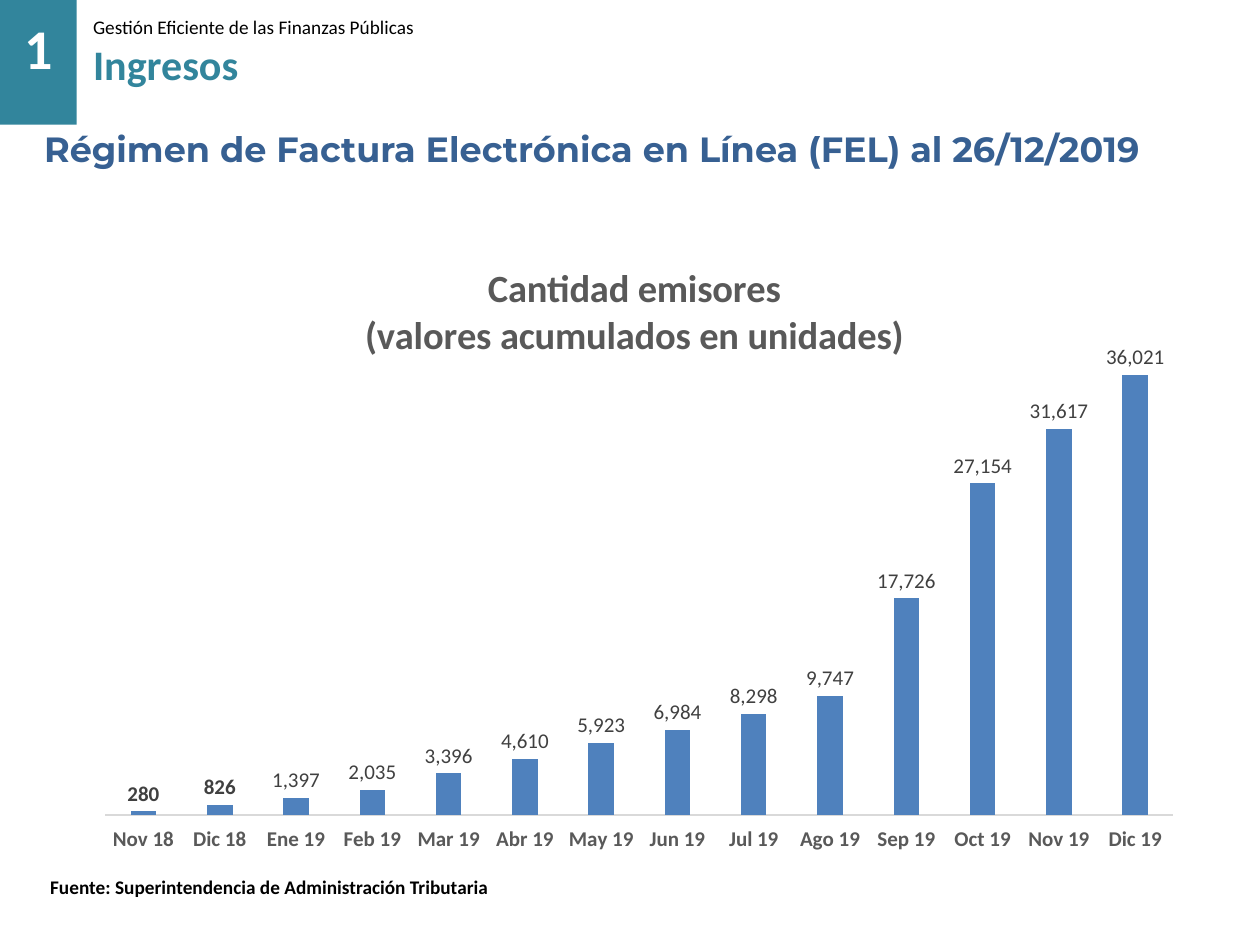
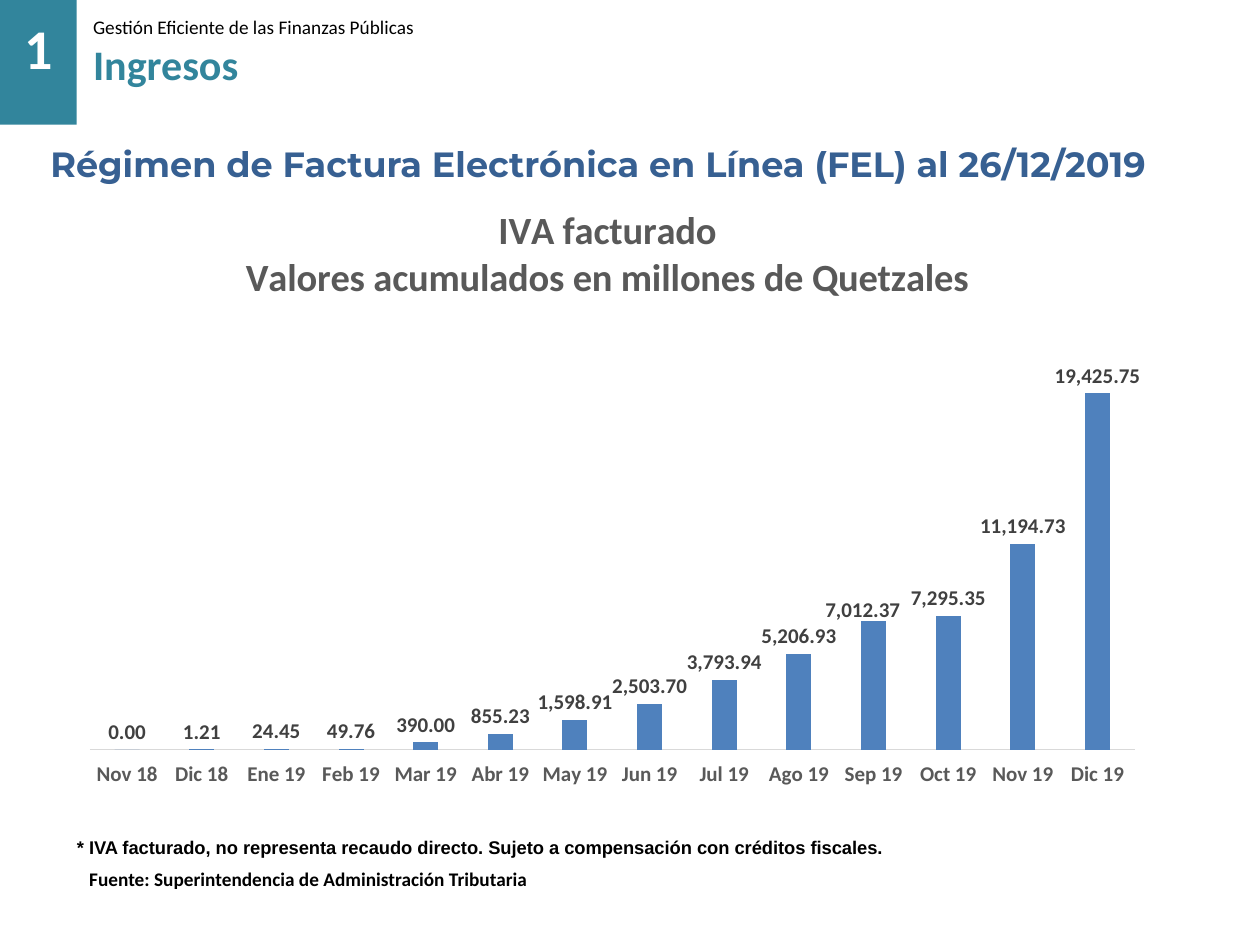
from lxml.etree import SubElement as Sub
from pptx import Presentation
from pptx.chart.data import CategoryChartData as ChartData
from pptx.dml.color import RGBColor as RGB
from pptx.enum.chart import XL_CHART_TYPE as Kind, XL_LABEL_POSITION as Pos
from pptx.enum.chart import XL_TICK_LABEL_POSITION as TickPos, XL_TICK_MARK as Tick
from pptx.enum.shapes import MSO_SHAPE as Shape
from pptx.enum.text import MSO_ANCHOR as Anchor, MSO_AUTO_SIZE as Auto
from pptx.oxml.ns import qn
from pptx.util import Inches, Pt

TEAL = RGB(0x32, 0x85, 0x9C)
NAVY = RGB(0x37, 0x60, 0x92)
BLUE = RGB(0x4F, 0x81, 0xBD)
DARK = RGB(0x40, 0x40, 0x40)
GRAY = RGB(0x59, 0x59, 0x59)
PALE = RGB(0xD9, 0xD9, 0xD9)
BLACK = RGB(0, 0, 0)
WHITE = RGB(255, 255, 255)

WIDTH, HEIGHT = Inches(10), Inches(7.5)
COLS, ROWS = 100, 75

HEAD = dict(name="Montserrat", size=Pt(20), bold=True, color=NAVY)
SMALL = dict(name="Calibri", size=Pt(11), bold=False, color=BLACK)
TOPIC = dict(name="Calibri", size=Pt(24), bold=True, color=TEAL)
DIGIT = dict(name="Calibri", size=Pt(32), bold=True, color=WHITE)
NOTE = dict(name="Arial", size=Pt(10.5), bold=True, color=BLACK)
TITLE = dict(name="Calibri", size=Pt(22), bold=True, color=GRAY)
LABEL = dict(name="Calibri", size=Pt(12), bold=True, color=DARK)
MONTH = LABEL | dict(color=GRAY)
SOURCE = SMALL | dict(bold=True)

HEADING = "Régimen de Factura Electrónica en Línea (FEL) al 26/12/2019"
ORIGIN = "Fuente: Superintendencia de Administración Tributaria"
MONTHS = ["Nov 18", "Dic 18"] + [
    f"{name} 19" for name in
    "Ene Feb Mar Abr May Jun Jul Ago Sep Oct Nov Dic".split()]
ISSUERS = [280, 826, 1397, 2035, 3396, 4610, 5923, 6984, 8298, 9747,
           17726, 27154, 31617, 36021]
TAXES = [0, 1.21, 24.45, 49.76, 390, 855.23, 1598.91, 2503.7, 3793.94,
         5206.93, 7012.37, 7295.35, 11194.73, 19425.75]


def paint(font, look):
    for key, value in look.items():
        if key == "color":
            font.color.rgb = value
        else:
            setattr(font, key, value)


def place(part, index, modes, **shares):
    """Give a chart part a manual layout, as shares of the chart's size."""
    for old in part.findall(qn("c:layout")):
        part.remove(old)
    layout = part.makeelement(qn("c:layout"))
    part.insert(index, layout)
    manual = Sub(layout, qn("c:manualLayout"))
    for key, value in (modes | shares).items():
        Sub(manual, qn(f"c:{key}")).set("val", str(value))


EDGE = dict(xMode="edge", yMode="edge")
INNER = dict(layoutTarget="inner") | EDGE


class Deck:
    def __init__(self):
        self.show = Presentation()
        self.show.slide_width, self.show.slide_height = WIDTH, HEIGHT
        self.slide = None

    def grid(self, col, row, cols, rows):
        across, down = WIDTH / COLS, HEIGHT / ROWS
        return [round(n) for n in
                (col * across, row * down, cols * across, rows * down)]

    def text(self, cell, *lines):
        """Add a growing text box; each line is a (text, look) pair."""
        frame = self.slide.shapes.add_textbox(*self.grid(*cell)).text_frame
        frame.word_wrap = True
        frame.auto_size = Auto.SHAPE_TO_FIT_TEXT
        self.fill(frame, lines)
        return frame

    def fill(self, frame, lines):
        for i, (words, look) in enumerate(lines):
            para = frame.add_paragraph() if i else frame.paragraphs[0]
            run = para.add_run()
            run.text = words
            paint(run.font, look)

    def strip(self, cell, words, look):
        """Add a one-line band of text, centred on its height."""
        frame = self.text(cell, (words, look))
        frame.auto_size = Auto.NONE
        frame.vertical_anchor = Anchor.MIDDLE
        frame.margin_left = frame.margin_right = Inches(0.07)
        frame.margin_top = frame.margin_bottom = Inches(0.04)
        frame.paragraphs[0].line_spacing = Pt(13.3)

    def block(self, cell, color):
        shape = self.slide.shapes.add_shape(Shape.RECTANGLE, *self.grid(*cell))
        shape.shadow.inherit = False
        shape.fill.solid()
        shape.fill.fore_color.rgb = color
        shape.line.fill.background()

    def page(self):
        self.slide = self.show.slides.add_slide(self.show.slide_layouts[6])

    def badge(self):
        self.text((6.4, 0.7, 86.2, 6.9),
                  ("Gestión Eficiente de las Finanzas Públicas", SMALL),
                  ("Ingresos", TOPIC))
        self.block((-0.2, -0.3, 6.3, 10.2), TEAL)
        self.text((1, 0.6, 5.6, 6.4), ("1", DIGIT))

    def bars(self, cell, values, form, top, title, spot, area):
        """Add a column chart; spot and area lay out its title and plot."""
        data = ChartData(number_format=form)
        data.categories = MONTHS
        data.add_series("Series 1", values)
        chart = self.slide.shapes.add_chart(
            Kind.COLUMN_CLUSTERED, *self.grid(*cell), data).chart
        paint(chart.font, dict(name="Calibri", size=Pt(10), color=BLACK))
        chart.has_legend = False
        chart.has_title = True
        self.fill(chart.chart_title.text_frame,
                  [(line, TITLE) for line in title])
        place(chart.chart_title.element, 1, EDGE, **spot)
        place(chart.element.find(".//" + qn("c:plotArea")), 0, INNER, **area)

        axis = chart.category_axis
        axis.major_tick_mark = axis.minor_tick_mark = Tick.NONE
        axis.tick_label_position = TickPos.LOW
        axis.format.line.color.rgb = PALE
        axis.format.line.width = Pt(0.75)
        paint(axis.tick_labels.font, MONTH)

        scale = chart.value_axis
        scale.minimum_scale, scale.maximum_scale = 0, top
        scale.has_major_gridlines = False
        scale.tick_labels.number_format = form
        scale.tick_labels.number_format_is_linked = False
        scale.visible = False

        plot = chart.plots[0]
        plot.gap_width = 199
        plot.vary_by_categories = False
        series = plot.series[0]
        series.format.fill.solid()
        series.format.fill.fore_color.rgb = BLUE
        labels = series.data_labels
        labels.show_value = True
        labels.number_format = form
        labels.number_format_is_linked = False
        labels.position = Pos.OUTSIDE_END
        paint(labels.font, LABEL)
        return series

    def tag(self, series, index, **look):
        """Style the label of one point and return its element."""
        label = series.points[index].data_label
        paint(label.font, LABEL | look)
        label.position = Pos.OUTSIDE_END
        path = f".//c:dLbl[c:idx/@val='{index}']"
        return series.data_labels._element.xpath(path)[0]


def main():
    deck = Deck()

    deck.page()
    deck.strip((2.8, 9.7, 98.7, 5.6), HEADING, HEAD)
    issued = deck.bars(
        (6.6, 14.7, 88.3, 53.4), ISSUERS, "#,##0", 40000,
        ["Cantidad emisores", "(valores acumulados en unidades)"],
        dict(x=0.25, y=0.11), dict(x=0.02, y=0.21, w=0.96, h=0.726))
    for i in range(2, len(ISSUERS)):
        deck.tag(issued, i, bold=False)
    deck.text((3, 69, 46.6, 2.9), (ORIGIN, SOURCE))
    deck.badge()

    deck.page()
    deck.strip((3.3, 10.9, 97, 5.6), HEADING, HEAD)
    deck.strip((5.4, 64.4, 76.5, 5.6),
               "* IVA facturado, no representa recaudo directo. "
               "Sujeto a compensación con créditos fiscales.", NOTE)
    taxed = deck.bars(
        (5.4, 11.9, 86.4, 50.9), TAXES, "#,##0.00", 25000,
        ["IVA facturado", "Valores acumulados en millones de Quetzales"],
        dict(x=0.16, y=0.08), dict(x=0.02, y=0.22, w=0.96, h=0.715))
    place(deck.tag(taxed, MONTHS.index("Sep 19")), 1, {}, x=-0.01, y=0.01)
    deck.text((6.1, 68.3, 46.6, 2.9), (ORIGIN, SOURCE))
    deck.badge()

    deck.show.save("out.pptx")


if __name__ == "__main__":
    main()
